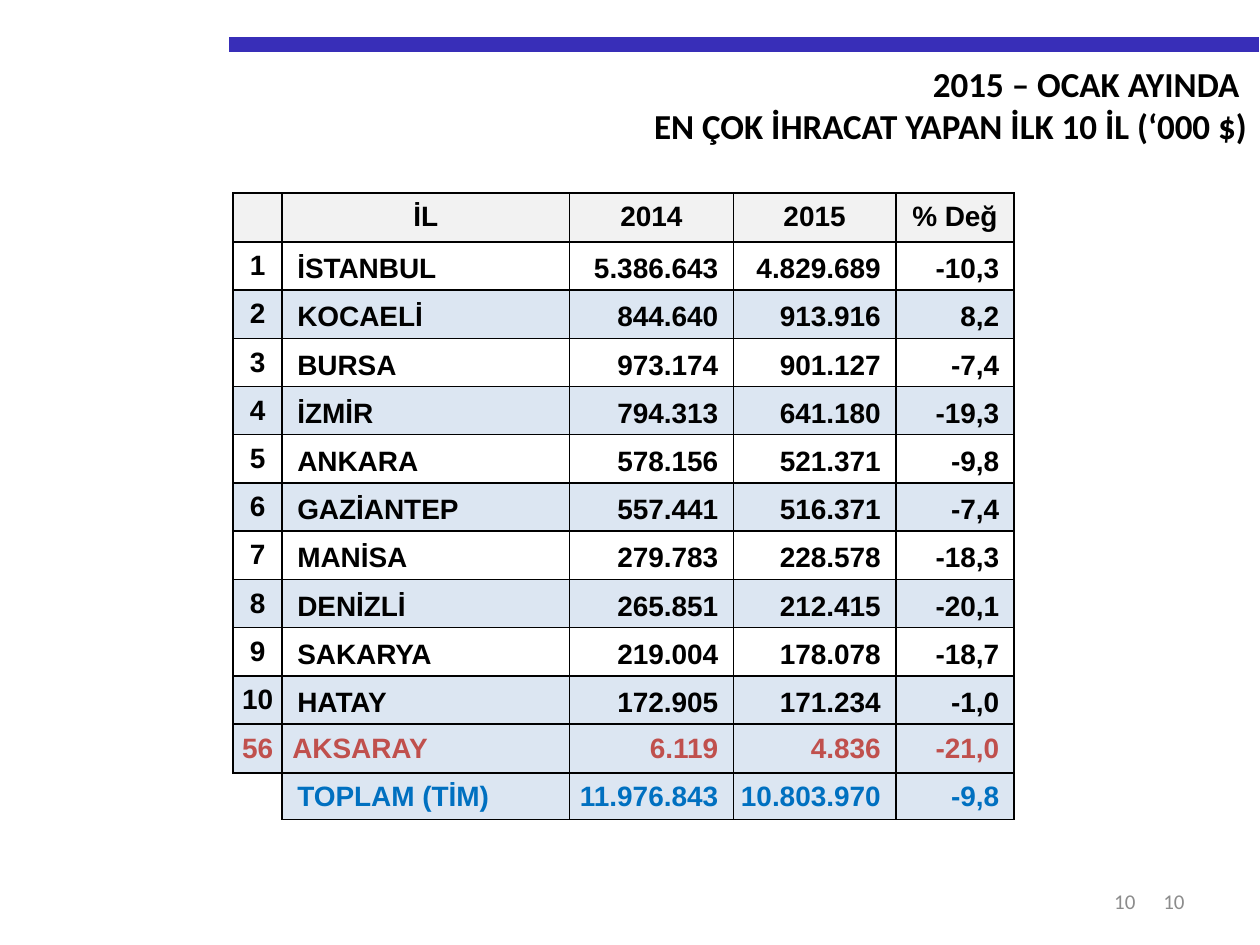
from dataclasses import dataclass

from lxml.etree import SubElement
from pptx import Presentation
from pptx.dml.color import RGBColor as RGB
from pptx.enum.shapes import MSO_CONNECTOR as CONNECTOR
from pptx.enum.text import MSO_ANCHOR as ANCHOR, PP_ALIGN as ALIGN
from pptx.oxml.ns import qn
from pptx.util import Inches, Pt


@dataclass(frozen=True)
class Theme:
    heading_font: str = "Calibri"
    table_font: str = "Arial"
    heading_size: int = 20
    table_size: int = 16
    number_size: int = 12
    ink: str = "000000"
    gray: str = "8C8C8C"
    rule: str = "382EB8"
    header: str = "F2F2F2"
    band: str = "DCE6F2"
    aksaray: str = "C0504D"
    total: str = "0070C0"


THEME = Theme()
HEADING = ["2015 – OCAK AYINDA ", "EN ÇOK İHRACAT YAPAN İLK 10 İL (‘000 $)"]
PAGE_NUMBER = "10"
PAGE_NUMBER_BOXES = [(7.17, 6.95, 2.33, 0.4), (7.01, 6.95, 2.1, 0.4)]
HEADER = ("", "İL", "2014", "2015", "% Değ")
TOP_TEN = [
    ("İSTANBUL", "5.386.643", "4.829.689", "-10,3"),
    ("KOCAELİ", "844.640", "913.916", "8,2"),
    ("BURSA", "973.174", "901.127", "-7,4"),
    ("İZMİR", "794.313", "641.180", "-19,3"),
    ("ANKARA", "578.156", "521.371", "-9,8"),
    ("GAZİANTEP", "557.441", "516.371", "-7,4"),
    ("MANİSA", "279.783", "228.578", "-18,3"),
    ("DENİZLİ", "265.851", "212.415", "-20,1"),
    ("SAKARYA", "219.004", "178.078", "-18,7"),
    ("HATAY", "172.905", "171.234", "-1,0"),
]
AKSARAY = ("56", "AKSARAY", "6.119", "4.836", "-21,0")
TOTAL = ("", "TOPLAM (TİM)", "11.976.843", "10.803.970", "-9,8")
ROWS = [HEADER, *((str(rank), *city) for rank, city in enumerate(TOP_TEN, 1)), AKSARAY, TOTAL]
AKSARAY_ROW, TOTAL_ROW = len(ROWS) - 2, len(ROWS) - 1
COLUMN_WIDTHS = [0.39, 2.28, 1.3, 1.29, 0.94]
ROW_HEIGHTS = [0.39] + [0.383] * len(TOP_TEN) + [0.39, 0.37]


def style_text(paragraph, font_name, size, color, bold, align):
    paragraph.alignment = align
    for run in paragraph.runs:
        run.font.name = font_name
        run.font.size = Pt(size)
        run.font.bold = bold
        run.font.color.rgb = RGB.from_string(color)


def add_text(slide, box, lines, size, color, bold, anchor):
    frame = slide.shapes.add_textbox(*map(Inches, box)).text_frame
    frame.word_wrap = True
    frame.vertical_anchor = anchor
    frame.text = "\n".join(lines)
    for paragraph in frame.paragraphs:
        style_text(paragraph, THEME.heading_font, size, color, bold, ALIGN.RIGHT)


def draw_borders(cell, hidden):
    properties = cell._tc.get_or_add_tcPr()
    for side in "LRTB":
        line = SubElement(properties, qn(f"a:ln{side}"), w=str(Pt(1)))
        if side in hidden:
            SubElement(line, qn("a:noFill"))
        else:
            SubElement(SubElement(line, qn("a:solidFill")), qn("a:srgbClr"), val=THEME.ink)


def cell_layout(row, column):
    if row == 0 and column > 0:
        return ALIGN.CENTER, (0.1, 0.05, 0.1, 0.05)
    if column == 0:
        return ALIGN.CENTER, (0, 0, 0, 0)
    if column == 1:
        return ALIGN.LEFT, (0.08 if row == AKSARAY_ROW else 0.12, 0.01, 0.01, 0)
    return ALIGN.RIGHT, (0.01, 0.01, 0.12, 0)


def cell_fill(row, column):
    if row == 0:
        return THEME.header
    if (row, column) == (TOTAL_ROW, 0):
        return None
    return THEME.band if row % 2 == 0 or row >= AKSARAY_ROW else None


def fill_cell(cell, text, row, column):
    align, insets = cell_layout(row, column)
    cell.margin_left, cell.margin_top, cell.margin_right, cell.margin_bottom = map(Inches, insets)
    cell.vertical_anchor = ANCHOR.MIDDLE
    draw_borders(cell, hidden="LB" if (row, column) == (TOTAL_ROW, 0) else "")
    fill = cell_fill(row, column)
    if fill:
        cell.fill.solid()
        cell.fill.fore_color.rgb = RGB.from_string(fill)
    else:
        cell.fill.background()
    cell.text_frame.text = text
    paragraph = cell.text_frame.paragraphs[0]
    if 0 < row < AKSARAY_ROW and column > 0:
        paragraph.line_spacing = 1.15
    color = {AKSARAY_ROW: THEME.aksaray, TOTAL_ROW: THEME.total}.get(row, THEME.ink)
    style_text(paragraph, THEME.table_font, THEME.table_size, color, True, align)


def add_export_table(slide):
    table = slide.shapes.add_table(
        len(ROWS), len(HEADER), Inches(1.85), Inches(1.53),
        Inches(sum(COLUMN_WIDTHS)), Inches(sum(ROW_HEIGHTS)),
    ).table
    table.first_row = table.horz_banding = False
    for column, width in zip(table.columns, COLUMN_WIDTHS):
        column.width = Inches(width)
    for table_row, height in zip(table.rows, ROW_HEIGHTS):
        table_row.height = Inches(height)
    for row, values in enumerate(ROWS):
        for column, text in enumerate(values):
            fill_cell(table.cell(row, column), text, row, column)


def add_top_rule(slide):
    rule = slide.shapes.add_connector(
        CONNECTOR.STRAIGHT, Inches(1.82), Inches(0.35), Inches(9.99), Inches(0.35)
    )
    rule.line.width = Pt(8.5)
    rule.line.color.rgb = RGB.from_string(THEME.rule)
    SubElement(rule._element.spPr, qn("a:effectLst"))


def main():
    deck = Presentation()
    deck.slide_width, deck.slide_height = Inches(10), Inches(7.5)
    slide = deck.slides.add_slide(deck.slide_layouts[6])
    add_top_rule(slide)
    for box in PAGE_NUMBER_BOXES:
        add_text(slide, box, [PAGE_NUMBER], THEME.number_size, THEME.gray, False, ANCHOR.MIDDLE)
    add_text(slide, (1.06, 0.45, 8.94, 0.77), HEADING, THEME.heading_size, THEME.ink, True, ANCHOR.TOP)
    add_export_table(slide)
    deck.save("out.pptx")


if __name__ == "__main__":
    main()
